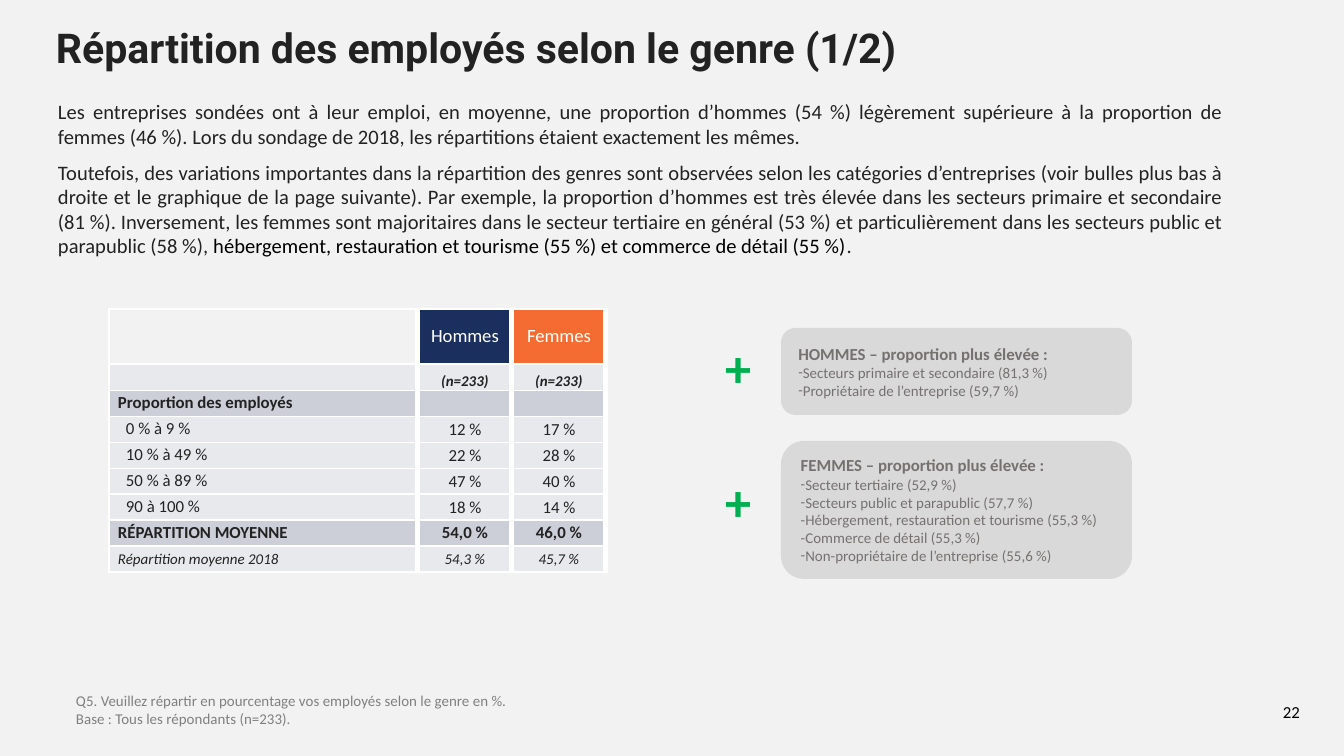
import pptx
import pptx.dml.color
import pptx.enum.shapes
import pptx.enum.text
import pptx.oxml.ns
import pptx.util
from lxml import etree

SCALE = 9144000 / 1344
ALIGN = pptx.enum.text.PP_ALIGN
ANCHOR = pptx.enum.text.MSO_ANCHOR
AUTO = pptx.enum.text.MSO_AUTO_SIZE
INK, GREY, WHITE = "222223", "767171", "FFFFFF"
PALE, BAND = "E7E9EC", "CCCFD7"
FRAME_MARGINS = ("margin_left", "margin_top", "margin_right", "margin_bottom")


def px(*lengths):
    """Turn pixel lengths into a list of EMU."""
    return [pptx.util.Emu(round(length * SCALE)) for length in lengths]


def paint(fill, colour):
    """Fill solidly with a hex colour, or leave clear for None."""
    if colour is None:
        fill.background()
    else:
        fill.solid()
        fill.fore_color.rgb = pptx.dml.color.RGBColor.from_string(colour)


def apply(target, values):
    """Set each named attribute on the target."""
    for name, value in values.items():
        setattr(target, name, value)


def add_child(parent, tag, **attributes):
    """Append a DrawingML element to its parent."""
    return etree.SubElement(parent, pptx.oxml.ns.qn(tag), attributes)


def style(size, colour=INK, bold=False, italic=False, name="Calibri"):
    """Describe the look of a run."""
    font = {"size": pptx.util.Pt(size), "bold": bold, "italic": italic, "name": name}
    return font, colour


def write(paragraph, runs, **layout):
    """Add styled runs to a paragraph and lay it out."""
    apply(paragraph, layout)
    for text, (font, colour) in runs:
        run = paragraph.add_run()
        run.text = text
        apply(run.font, font)
        paint(run.font.fill, colour)


def set_frame(frame, insets=(13, 7, 13, 7), **values):
    """Set the insets, wrapping and anchoring of a text frame."""
    apply(frame, {"word_wrap": True, **dict(zip(FRAME_MARGINS, px(*insets))), **values})


def add_label(slide, box, paragraphs, insets=(13, 7, 13, 7), anchor=ANCHOR.TOP,
              auto_size=AUTO.SHAPE_TO_FIT_TEXT, **layout):
    """Add a text box with one list of runs per paragraph."""
    frame = slide.shapes.add_textbox(*px(*box)).text_frame
    set_frame(frame, insets, vertical_anchor=anchor, auto_size=auto_size)
    for index, runs in enumerate(paragraphs):
        paragraph = frame.add_paragraph() if index else frame.paragraphs[0]
        write(paragraph, runs, **layout)
    return frame


def add_title(slide, text):
    """Place and format the title placeholder."""
    title = slide.shapes.title
    apply(title, dict(zip(("left", "top", "width", "height"), px(47, 26, 1261, 48))))
    set_frame(title.text_frame, (9, 5, 9, 5), vertical_anchor=ANCHOR.MIDDLE,
              auto_size=AUTO.NONE)
    write(title.text_frame.paragraphs[0], [(text, style(22, bold=True, name="Roboto"))],
          alignment=ALIGN.LEFT, line_spacing=0.9)


def add_bubble(slide, top, height, heading, items):
    """Add a rounded bubble with a heading, a dashed list and a plus sign."""
    bubble = slide.shapes.add_shape(
        pptx.enum.shapes.MSO_SHAPE.ROUNDED_RECTANGLE, *px(781, top, 351, height))
    bubble.shadow.inherit = False
    paint(bubble.fill, "D9D9D9")
    paint(bubble.line.fill, None)
    frame = bubble.text_frame
    set_frame(frame, vertical_anchor=ANCHOR.MIDDLE)
    write(frame.paragraphs[0], [(heading, style(9, GREY, bold=True))], alignment=ALIGN.LEFT)
    hang = px(12)[0]
    for item in items:
        paragraph = frame.add_paragraph()
        properties = paragraph._p.get_or_add_pPr()
        apply(properties, {"marL": hang, "indent": -hang})
        add_child(properties, "a:buFont", typeface="Calibri")
        add_child(properties, "a:buChar", char="-")
        write(paragraph, [(item, style(8, GREY))], alignment=ALIGN.LEFT)


def set_borders(cell, left):
    """Draw white borders, wide between columns and thin elsewhere."""
    properties = cell._tc.get_or_add_tcPr()
    for tag, points in (("a:lnL", left), ("a:lnR", 3), ("a:lnT", 0.75), ("a:lnB", 0.75)):
        line = add_child(properties, tag, w=str(pptx.util.Pt(points)))
        add_child(add_child(line, "a:solidFill"), "a:srgbClr", val=WHITE)


def fill_cell(cell, text, look, colour, insets, anchor, left, **layout):
    """Write and format one table cell."""
    apply(cell, dict(zip(FRAME_MARGINS, px(*insets))))
    cell.vertical_anchor = anchor
    set_borders(cell, left)
    paint(cell.fill, colour)
    paragraph = cell.text_frame.paragraphs[0]
    if text:
        write(paragraph, [(text, look)], **layout)
    else:
        add_child(paragraph._p, "a:endParaRPr", sz="800")


def add_gender_table(slide):
    """Add the table of employee shares by gender."""
    header, sample = style(10, WHITE), style(8, bold=True, italic=True)
    plain, strong, past = style(9), style(9, bold=True), style(8, italic=True)
    rows = [
        (("", "Hommes", "Femmes"), header, (None, "1B2F5F", "F46C31"), 0),
        (("", "(n=233)", "(n=233)"), sample, (PALE,) * 3, 0),
        (("Proportion des employés", "", ""), strong, (BAND,) * 3, 9),
        (("0 % à 9 %", "12 %", "17 %"), plain, (PALE,) * 3, 17),
        (("10 % à 49 %", "22 %", "28 %"), plain, (PALE,) * 3, 17),
        (("50 % à 89 %", "47 %", "40 %"), plain, (PALE,) * 3, 17),
        (("90 à 100 %", "18 %", "14 %"), plain, (PALE,) * 3, 17),
        (("RÉPARTITION MOYENNE", "54,0 %", "46,0 %"), strong, (BAND,) * 3, 9),
        (("Répartition moyenne 2018", "54,3 %", "45,7 %"), past, (PALE,) * 3, 9),
    ]
    table = slide.shapes.add_table(len(rows), 3, *px(109, 309, 497, 263)).table
    apply(table, {"first_row": False, "horz_banding": False})
    for column, width in zip(table.columns, px(309, 94, 94)):
        column.width = width
    for r, (texts, look, colours, indent) in enumerate(rows):
        table.rows[r].height = px(26 if r else 55)[0]
        anchor = ANCHOR.TOP if look is sample else ANCHOR.MIDDLE
        spacing = {"line_spacing": pptx.util.Pt(14)} if look is sample else {}
        for c, (text, colour) in enumerate(zip(texts, colours)):
            insets = (1, 1 if look is plain else 0, 1, 0) if c else (indent, 0, 9, 0)
            fill_cell(table.cell(r, c), text, look, colour, insets, anchor,
                      3 if c else 0.75, alignment=ALIGN.CENTER if c else ALIGN.LEFT, **spacing)


def main():
    """Build the slide and save it."""
    deck = pptx.Presentation()
    apply(deck, dict(zip(("slide_width", "slide_height"), px(1344, 756))))
    slide = deck.slides.add_slide(deck.slide_layouts[5])
    paint(slide.background.fill, "F2F2F2")
    add_title(slide, "Répartition des employés selon le genre (1/2)")
    add_label(slide, (1257, 689, 69, 40), [[("22", style(9, "000000"))]],
              anchor=ANCHOR.BOTTOM, auto_size=AUTO.NONE, alignment=ALIGN.CENTER)
    body = style(11)
    findings = add_label(slide, (44, 99, 1193, 160), [
        [("Les entreprises sondées ont à leur emploi, en moyenne, une proportion d’hommes (54 %) "
          "légèrement supérieure à la proportion de femmes (46 %). Lors du sondage de 2018, les "
          "répartitions étaient exactement les mêmes.", body)],
        [("Toutefois, des variations importantes dans la répartition des genres sont observées "
          "selon les catégories d’entreprises (voir bulles plus bas à droite et le graphique de "
          "la page suivante). Par exemple, la proportion d’hommes est très élevée dans les "
          "secteurs primaire et secondaire (81 %). Inversement, les femmes sont majoritaires "
          "dans le secteur tertiaire en général (53 %) et particulièrement dans les secteurs "
          "public et parapublic (58 %), ", body),
         ("hébergement, restauration et tourisme (55 %) et commerce de détail (55 %)",
          style(11, "000000")),
         (".", body)],
    ], insets=(14, 0, 13, 0), alignment=ALIGN.JUSTIFY)
    findings.paragraphs[1].space_before = pptx.util.Pt(6)
    add_gender_table(slide)
    add_bubble(slide, 328, 87, "HOMMES – proportion plus élevée :", [
        "Secteurs primaire et secondaire (81,3 %)", "Propriétaire de l’entreprise (59,7 %)"])
    add_bubble(slide, 441, 138, "FEMMES – proportion plus élevée :", [
        "Secteur tertiaire (52,9 %)", "Secteurs public et parapublic (57,7 %)",
        "Hébergement, restauration et tourisme (55,3 %)", "Commerce de détail (55,3 %)",
        "Non-propriétaire de l’entreprise (55,6 %)"])
    for top in (328, 462):
        add_label(slide, (672, top, 133, 77), [[("+", style(28, "00B050", bold=True))]],
                  alignment=ALIGN.CENTER)
    note = style(8, "808080")
    add_label(slide, (63, 685, 1086, 50), [
        [("Q5. Veuillez répartir en pourcentage vos employés selon le genre en %.", note)],
        [("Base : Tous les répondants (n=233).", note)]])
    deck.save("out.pptx")


if __name__ == "__main__":
    main()
